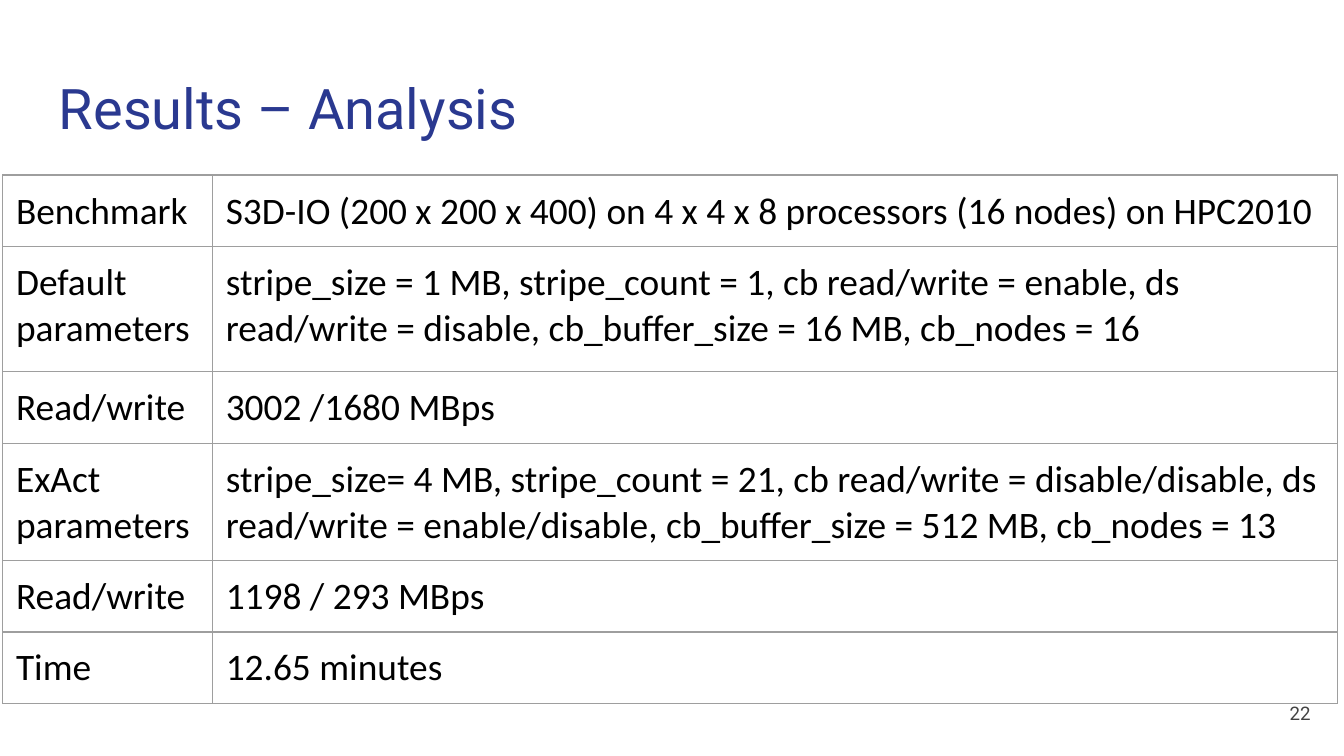
from pptx import Presentation
from pptx.dml.color import RGBColor
from pptx.enum.text import MSO_ANCHOR, PP_ALIGN
from pptx.oxml import parse_xml
from pptx.oxml.ns import nsdecls
from pptx.util import Pt

NAVY = RGBColor(0x2A, 0x39, 0x90)
BLACK = RGBColor(0, 0, 0)
GRAY = RGBColor(0x43, 0x43, 0x43)
BORDER = RGBColor(0x9E, 0x9E, 0x9E)
INSET = Pt(7.2)


def style_text(tf, font, size, color):
    tf.word_wrap = True
    for r in tf.paragraphs[0].runs:
        r.font.name = font
        r.font.size = Pt(size)
        r.font.color.rgb = color


def add_label(s, text, box, size, color):
    sp = s.shapes.add_textbox(*[Pt(v) for v in box])
    tf = sp.text_frame
    tf.text = text
    tf.margin_left = tf.margin_right = tf.margin_top = tf.margin_bottom = INSET
    style_text(tf, "Roboto", size, color)
    return tf


prs = Presentation()
prs.slide_width, prs.slide_height = Pt(720), Pt(405)
s = prs.slides.add_slide(prs.slide_layouts[6])

add_label(s, "Results – Analysis", (24.5, 32.4, 671, 47.5), 30, NAVY)

rows = [
    (35.3, "Benchmark", "S3D-IO (200 x 200 x 400) on 4 x 4 x 8 processors (16 nodes) on HPC2010"),
    (67, "Default parameters",
     "stripe_size = 1 MB, stripe_count = 1, cb read/write = enable, ds "
     "read/write = disable, cb_buffer_size = 16 MB, cb_nodes = 16"),
    (35.3, "Read/write", "3002 /1680 MBps"),
    (57.6, "ExAct parameters",
     "stripe_size= 4 MB, stripe_count = 21, cb read/write = disable/disable, ds "
     "read/write = enable/disable, cb_buffer_size = 512 MB, cb_nodes = 13"),
    (35.3, "Read/write", "1198 / 293 MBps"),
    (35.3, "Time", "12.65 minutes"),
]
widths = [112.4, 602.6]
height = sum(row[0] for row in rows)
table = s.shapes.add_table(len(rows), len(widths), Pt(1.4), Pt(93.8), Pt(sum(widths)), Pt(height)).table
table.first_row = table.horz_banding = False
for col, width in zip(table.columns, widths):
    col.width = Pt(width)

for i, (row_height, *texts) in enumerate(rows):
    table.rows[i].height = Pt(row_height)
    for j, text in enumerate(texts):
        cell = table.cell(i, j)
        cell.text = text
        cell.margin_left = cell.margin_right = cell.margin_top = cell.margin_bottom = INSET
        style_text(cell.text_frame, "Calibri", 20, BLACK)
        cell.fill.background()
        tc_pr = cell._tc.get_or_add_tcPr()
        for k, side in enumerate(("lnL", "lnR", "lnT", "lnB")):
            tc_pr.insert(k, parse_xml(
                f'<a:{side} {nsdecls("a")} w="{Pt(0.75)}"><a:solidFill>'
                f'<a:srgbClr val="{BORDER}"/></a:solidFill></a:{side}>'))

tf = add_label(s, "22", (666, 366.5, 43.2, 31), 10, GRAY)
tf.vertical_anchor = MSO_ANCHOR.MIDDLE
tf.paragraphs[0].alignment = PP_ALIGN.RIGHT

prs.save("out.pptx")
